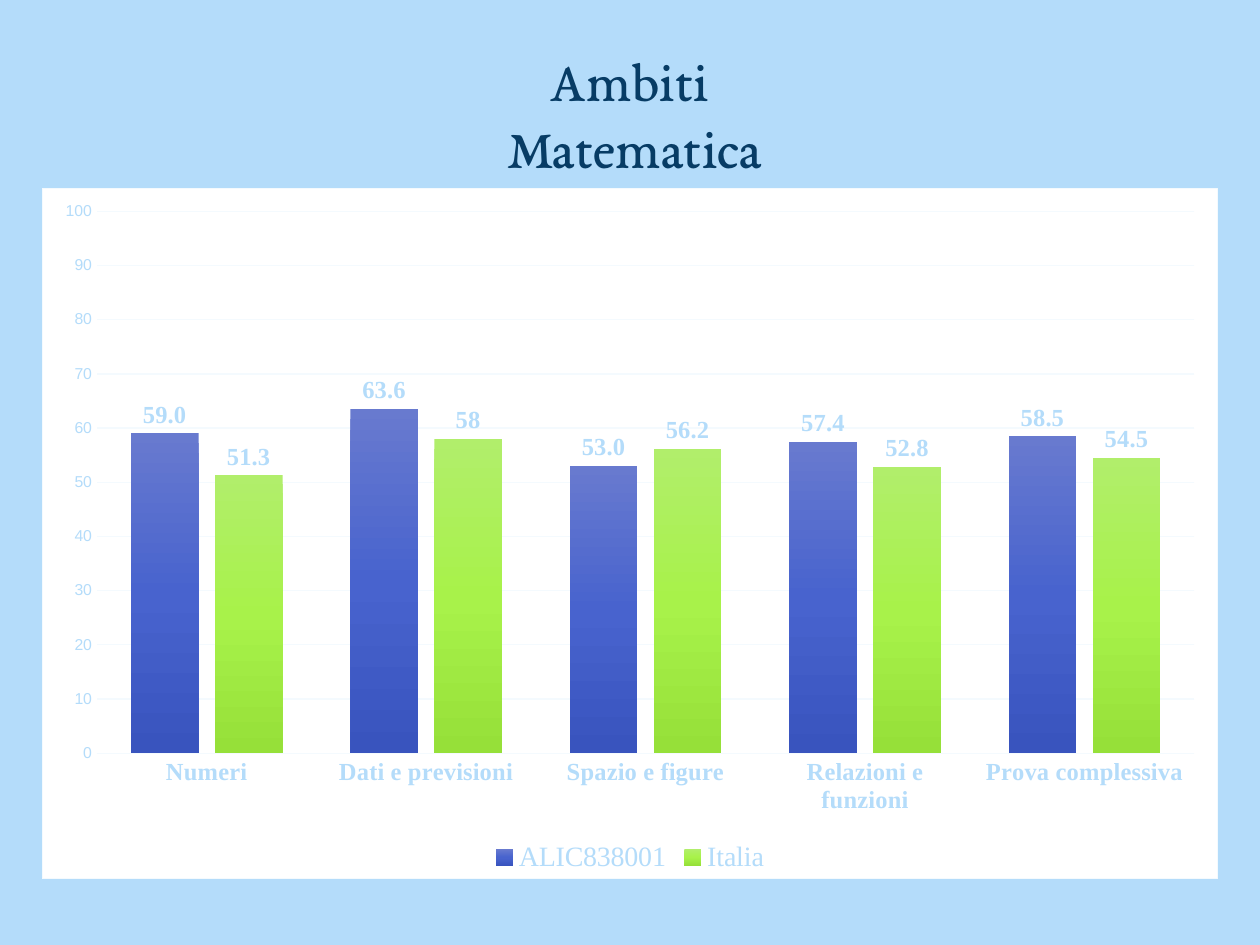
from lxml import etree
from pptx import Presentation
from pptx.chart.data import CategoryChartData
from pptx.dml.color import RGBColor
from pptx.enum.chart import (XL_CHART_TYPE, XL_LABEL_POSITION,
                             XL_LEGEND_POSITION, XL_TICK_MARK)
from pptx.enum.text import MSO_ANCHOR, MSO_AUTO_SIZE, PP_ALIGN
from pptx.util import Inches, Pt

CENTER, TOP, NO_FIT = PP_ALIGN.CENTER, MSO_ANCHOR.TOP, MSO_AUTO_SIZE.NONE
COLUMNS = XL_CHART_TYPE.COLUMN_CLUSTERED
OUTSIDE, BOTTOM = XL_LABEL_POSITION.OUTSIDE_END, XL_LEGEND_POSITION.BOTTOM
NO_TICK = XL_TICK_MARK.NONE
SKY, PALE, NAVY = "B4DCFA", "F4FAFE", "073C65"
SERIF = "Times New Roman"
DRAW = "http://schemas.openxmlformats.org/drawingml/2006/main"
CHART = "http://schemas.openxmlformats.org/drawingml/2006/chart"

AREAS = ["Numeri", "Dati e previsioni", "Spazio e figure",
         "Relazioni e funzioni", "Prova complessiva"]
# Name, scores, label format, gradient from top to bottom
SERIES = [
    ("ALIC838001", [59, 63.6, 53, 57.4, 58.5], "0.0",
     ["687ACF", "4863CE", "3954BE"]),
    ("Italia", [51.3, 58, 56.2, 52.8, 54.5], "General",
     ["B1EE6B", "A8F24A", "96E039"]),
]


def color(code):
    return RGBColor.from_string(code)


def style(font, size, code=SKY, name=SERIF, bold=False):
    font.size, font.name, font.bold = Pt(size), name, bold
    font.color.rgb = color(code)


def write(frame, text, align=CENTER, **look):
    frame.text = text
    for par in frame.paragraphs:
        par.alignment = align
        for run in par.runs:
            style(run.font, **look)


def rule(line, code=PALE):
    line.color.rgb = color(code)
    line.width = Pt(0.75)


def shade(series, codes):
    series.format.line.fill.background()
    last = len(codes) - 1
    stops = "".join(
        f'<a:gs pos="{100000 * i // last}"><a:srgbClr val="{code}"/></a:gs>'
        for i, code in enumerate(codes))
    grad = etree.fromstring(
        f'<a:gradFill xmlns:a="{DRAW}" rotWithShape="1">'
        f'<a:gsLst>{stops}</a:gsLst><a:lin ang="5400000" scaled="0"/>'
        '</a:gradFill>')
    series._element.get_or_add_spPr().insert(0, grad)


def frame_chart(chart, fill, edge):
    area = etree.fromstring(
        f'<c:spPr xmlns:c="{CHART}" xmlns:a="{DRAW}">'
        f'<a:solidFill><a:srgbClr val="{fill}"/></a:solidFill>'
        f'<a:ln w="{Pt(0.75)}"><a:solidFill><a:srgbClr val="{edge}"/>'
        '</a:solidFill></a:ln></c:spPr>')
    chart._chartSpace.find(f"{{{CHART}}}chart").addnext(area)


def add_title(slide, box):
    title = slide.shapes.title
    title.left, title.top, title.width, title.height = box
    frame = title.text_frame
    write(frame, "Ambiti\n Matematica", size=32, code=NAVY,
          name="EB Garamond")
    frame.word_wrap, frame.auto_size = True, NO_FIT
    frame.vertical_anchor = TOP


def add_scores(slide, box):
    data = CategoryChartData()
    data.categories = AREAS
    for name, scores, form, _ in SERIES:
        data.add_series(name, scores, form)
    chart = slide.shapes.add_chart(COLUMNS, *box, data).chart
    style(chart.font, 10, "000000", "Arial")
    frame_chart(chart, "FFFFFF", PALE)
    chart.has_title = False

    # Legend
    chart.has_legend = True
    chart.legend.position = BOTTOM
    chart.legend.include_in_layout = False
    style(chart.legend.font, 16)

    # Axes
    cat, val = chart.category_axis, chart.value_axis
    for axis in (cat, val):
        axis.major_tick_mark = axis.minor_tick_mark = NO_TICK
    style(cat.tick_labels.font, 14, bold=True)
    rule(cat.format.line)
    style(val.tick_labels.font, 9, name="Arial")
    val.tick_labels.number_format = "0"
    val.tick_labels.number_format_is_linked = False
    val.minimum_scale, val.maximum_scale, val.major_unit = 0, 100, 10
    val.format.line.fill.background()
    rule(val.major_gridlines.format.line)

    # Columns and their labels
    plot = chart.plots[0]
    plot.gap_width, plot.overlap = 100, -24
    plot.vary_by_categories = False
    for series, (_, _, form, codes) in zip(plot.series, SERIES):
        shade(series, codes)
        labels = series.data_labels
        labels.show_value, labels.position = True, OUTSIDE
        labels.number_format = form
        labels.number_format_is_linked = False
        style(labels.font, 14, bold=True)


def main():
    deck = Presentation()
    deck.slide_width, deck.slide_height = Inches(10), Inches(7.5)
    slide = deck.slides.add_slide(deck.slide_layouts[5])
    slide.background.fill.solid()
    slide.background.fill.fore_color.rgb = color(SKY)
    add_title(slide, [Inches(n) for n in (0.12, 0.31, 9.75, 1.18)])
    add_scores(slide, [Inches(n) for n in (0.33, 1.49, 9.34, 5.49)])
    deck.save("out.pptx")


if __name__ == "__main__":
    main()
